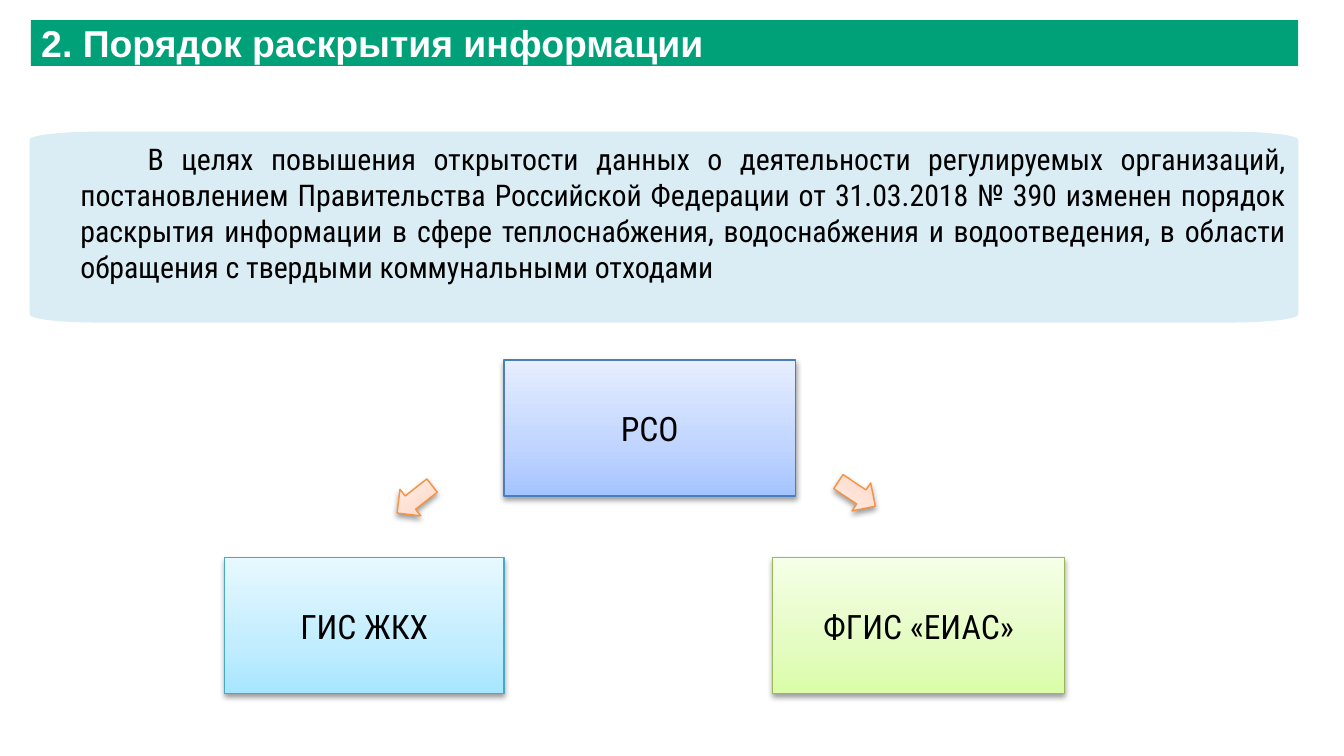
import copy
import math

from lxml import etree
from pptx import Presentation
from pptx import util as u
from pptx.dml.color import RGBColor
from pptx.enum import shapes, text
from pptx.oxml.ns import qn

PX = 9144  # EMU per px, 100 px to the inch
BODY_FONT = "Roboto Condensed"
COLORS = {"title": "00A178", "panel": "DBEDF4", "white": "FFFFFF", "black": "000000"}
# Line colour, then gradient stops from bottom to top
THEMES = {
    "blue": ("4B7EBC", ("A4C4FF", "BFD4FF", "E6EEFF")),
    "cyan": ("46AAC5", ("A7E6FF", "C1EDFF", "E7F8FF")),
    "green": ("98B955", ("DAFDA7", "E4FCC2", "F5FFE7")),
    "orange": ("F69240", ("FFD2BD", "FFDED0", "FFF2ED")),
}
STOP_POSITIONS = (0, 0.35, 1)


def emu(*lengths):
    return [u.Emu(round(length * PX)) for length in lengths]


def rgb(name):
    return RGBColor.from_string(COLORS[name])


def add_run(paragraph, wording, size, font, color, bold=False):
    run = paragraph.add_run()
    run.text = wording
    run.font.size = u.Pt(size)
    run.font.name = font
    run.font.bold = bold
    run.font.color.rgb = rgb(color)


def add_soft_shadow(shape):
    shape.shadow.inherit = False
    effects = shape._element.spPr.find(qn("a:effectLst"))
    shadow = etree.SubElement(
        effects, qn("a:outerShdw"), blurRad=str(u.Pt(3.1)), dist=str(u.Pt(1.6)),
        dir="5400000", rotWithShape="0")
    color = etree.SubElement(shadow, qn("a:srgbClr"), val=COLORS["black"])
    etree.SubElement(color, qn("a:alpha"), val="38000")


def add_themed_shape(slide, preset, box, theme):
    """Add a shape with a three-stop gradient, thin outline and shadow."""
    line_color, stop_colors = THEMES[theme]
    shape = slide.shapes.add_shape(preset, *emu(*box))
    shape.fill.gradient()
    shape.fill.gradient_angle = 90
    stop_list = shape._element.spPr.find(qn("a:gradFill")).find(qn("a:gsLst"))
    stop_list.append(copy.deepcopy(stop_list[0]))
    for stop, position, color in zip(shape.fill.gradient_stops, STOP_POSITIONS, stop_colors):
        stop.position = position
        stop.color.rgb = RGBColor.from_string(color)
    shape.line.color.rgb = RGBColor.from_string(line_color)
    shape.line.width = u.Pt(0.75)
    add_soft_shadow(shape)
    return shape


def add_title(slide, box, wording):
    title = slide.shapes.title
    title.left, title.top, title.width, title.height = emu(*box)
    title.fill.solid()
    title.fill.fore_color.rgb = rgb("title")
    frame = title.text_frame
    frame.margin_left = frame.margin_right = frame.margin_top = frame.margin_bottom = 0
    frame.vertical_anchor = text.MSO_ANCHOR.MIDDLE
    frame.auto_size = text.MSO_AUTO_SIZE.NONE
    paragraph = frame.paragraphs[0]
    paragraph.alignment = text.PP_ALIGN.LEFT
    add_run(paragraph, wording, 20, "Arial", "white", bold=True)


def add_panel(slide, box, wording):
    """Add a panel with flat elliptical corners and a justified paragraph."""
    left, top, width, height = box
    radius_x, radius_y, steps = 49, 6, 8
    centers = (
        (left + width - radius_x, top + height - radius_y),
        (left + radius_x, top + height - radius_y),
        (left + radius_x, top + radius_y),
        (left + width - radius_x, top + radius_y),
    )
    points = []
    for quarter, (x, y) in enumerate(centers):
        for step in range(steps + 1):
            angle = (quarter + step / steps) * math.pi / 2
            points.append(emu(x + radius_x * math.cos(angle), y + radius_y * math.sin(angle)))
    builder = slide.shapes.build_freeform(*points[0])
    builder.add_line_segments(points[1:], close=True)
    panel = builder.convert_to_shape()
    panel.fill.solid()
    panel.fill.fore_color.rgb = rgb("panel")
    panel.line.fill.background()
    panel.shadow.inherit = False

    textbox = slide.shapes.add_textbox(*emu(left + 28, top + 2, width - 27, height + 3))
    textbox.text_frame.word_wrap = True
    paragraph = textbox.text_frame.paragraphs[0]
    paragraph.alignment = text.PP_ALIGN.JUSTIFY
    paragraph._p.get_or_add_pPr().set("indent", str(u.Inches(0.5)))
    add_run(paragraph, wording, 16, BODY_FONT, "black")


def add_node(slide, box, wording, theme):
    node = add_themed_shape(slide, shapes.MSO_SHAPE.RECTANGLE, box, theme)
    frame = node.text_frame
    frame.word_wrap = True
    frame.vertical_anchor = text.MSO_ANCHOR.MIDDLE
    paragraph = frame.paragraphs[0]
    paragraph.alignment = text.PP_ALIGN.CENTER
    add_run(paragraph, wording, 18, BODY_FONT, "black")


def add_scheme(slide, box):
    """Add the source node, its two receivers and the arrows to them."""
    left, top, width, height = box
    node_height = 101
    lower = top + height - node_height
    add_node(slide, (left + width - 217, lower, 217, node_height), "ФГИС «ЕИАС»", "green")
    add_node(slide, (left, lower, 208, node_height), "ГИС ЖКХ", "cyan")
    add_node(slide, (left + 208, top, 217, node_height), "РСО", "blue")
    for x, y, rotation in ((125, 91, 321.9), (454, 87, 213.7)):
        arrow = add_themed_shape(
            slide, shapes.MSO_SHAPE.LEFT_ARROW, (left + x, top + y, 33, 25), "orange")
        arrow.rotation = rotation


def main():
    presentation = Presentation()
    slide_width = 1000
    presentation.slide_width, presentation.slide_height = emu(slide_width, slide_width * 9 / 16)
    slide = presentation.slides.add_slide(presentation.slide_layouts[5])
    add_title(slide, (23, 15, 943, 34), " 2. Порядок раскрытия информации")
    add_panel(
        slide, (22, 98, 944, 142),
        "В целях повышения открытости данных о деятельности регулируемых организаций, "
        "постановлением Правительства Российской Федерации от 31.03.2018 № 390 изменен "
        "порядок раскрытия информации в сфере теплоснабжения, водоснабжения и "
        "водоотведения, в области обращения с твердыми коммунальными отходами")
    add_scheme(slide, (167, 268, 625, 248))
    presentation.save("out.pptx")


if __name__ == "__main__":
    main()
